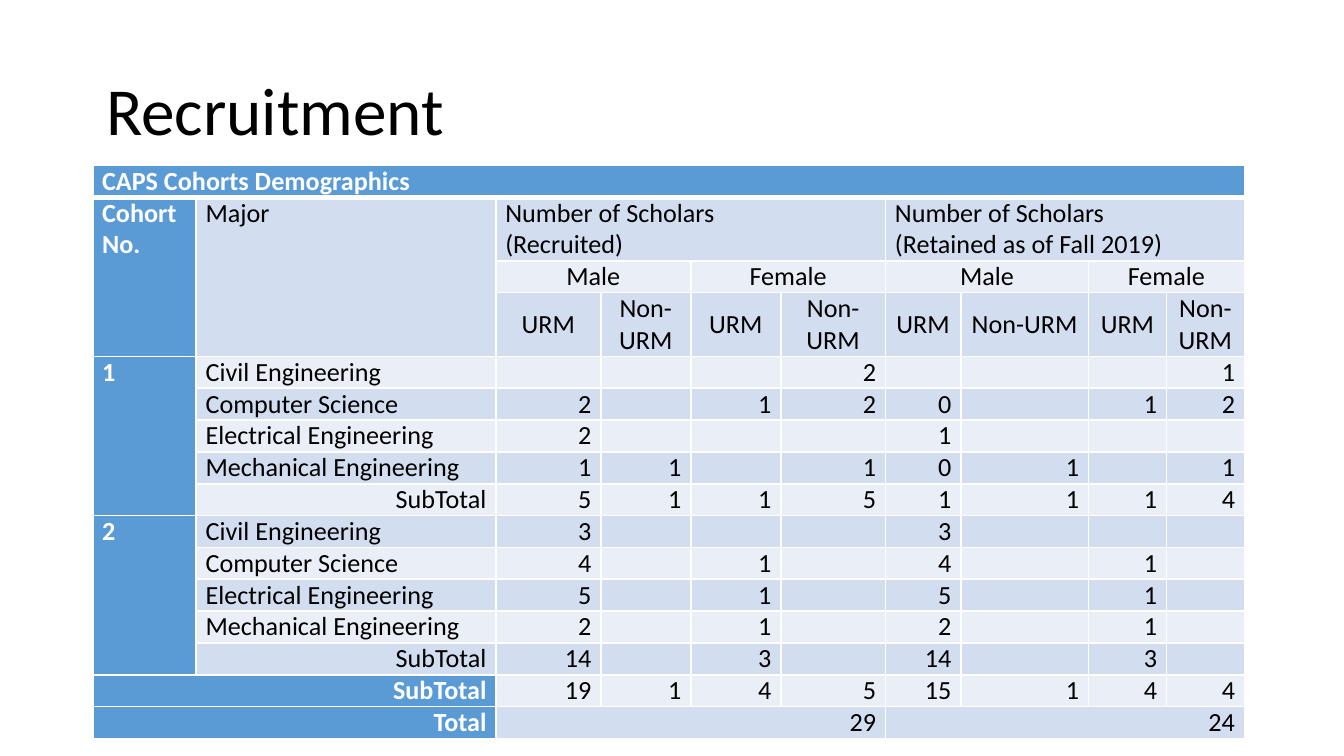
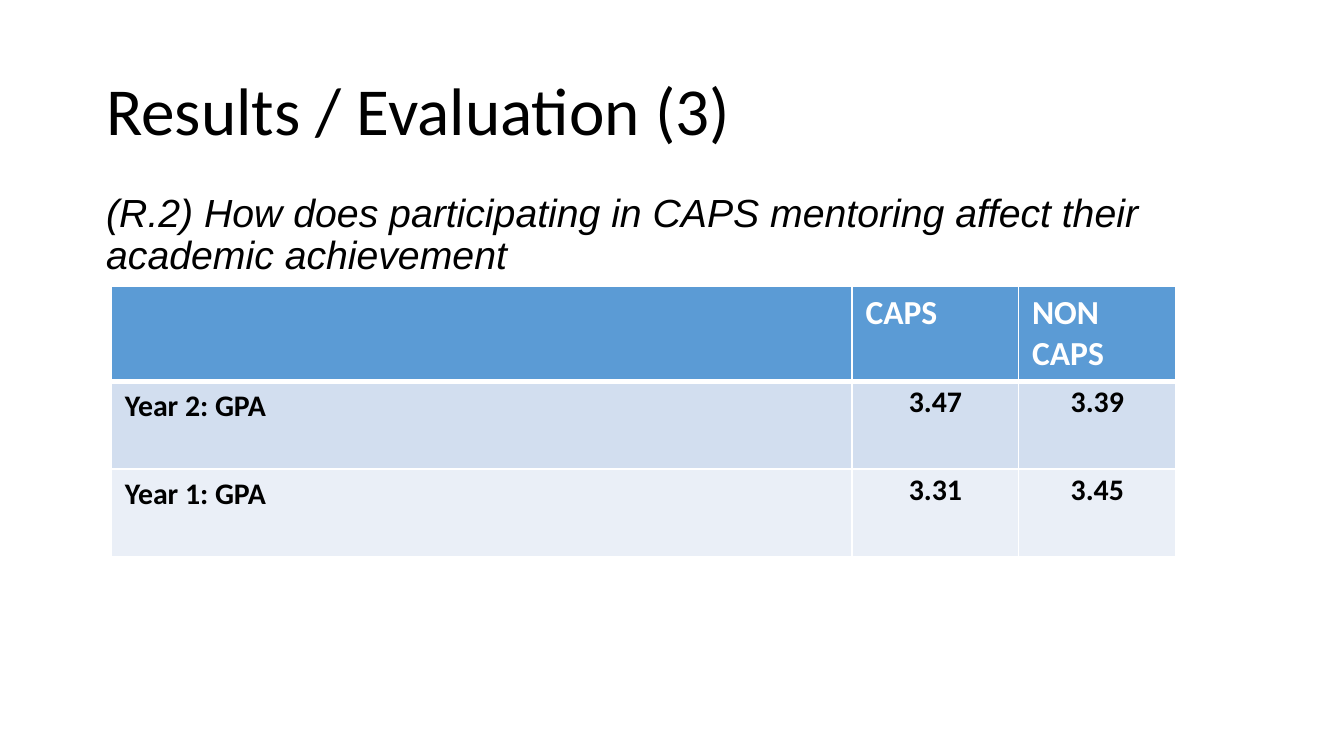
"""Build two slides on scholar recruitment and results."""
from lxml import etree
from pptx import Presentation
from pptx.dml.color import RGBColor
from pptx.enum.text import MSO_ANCHOR, MSO_AUTO_SIZE, PP_ALIGN
from pptx.oxml.ns import qn
from pptx.util import Inches, Pt

LEFT, RIGHT, CENTER, JUSTIFY = PP_ALIGN.LEFT, PP_ALIGN.RIGHT, PP_ALIGN.CENTER, PP_ALIGN.JUSTIFY
TOP, MIDDLE = MSO_ANCHOR.TOP, MSO_ANCHOR.MIDDLE
NO_AUTOFIT = MSO_AUTO_SIZE.NONE

BLACK = RGBColor(0x00, 0x00, 0x00)
WHITE = RGBColor(0xFF, 0xFF, 0xFF)
HEADER_BLUE = RGBColor(0x5B, 0x9B, 0xD5)
BANDS = (RGBColor(0xEA, 0xEF, 0xF7), RGBColor(0xD2, 0xDE, 0xEF))

SLIDE_WIDTH = Inches(10)
SLIDE_HEIGHT = SLIDE_WIDTH * 9 // 16
TITLE_BOX = (0.69, 0.3, 8.62, 1.09)
BODY_BOX = (0.69, 1.39, 8.62, 3.68)
TITLE_ONLY, TITLE_AND_CONTENT = 5, 1
TIGHT = (0.07, 0)
ROOMY = (0.1, 0.05)

LINE_HEIGHT = 0.23
COHORT_COLUMNS = (0.77, 2.23, 0.78, 0.67, 0.67, 0.78, 0.56, 0.95, 0.58, 0.58)
COHORT_LINES = (1, 2, 1, 2) + (1,) * 12
MAJORS = ("Civil Engineering", "Computer Science", "Electrical Engineering",
          "Mechanical Engineering", "SubTotal")
COHORT_COUNTS = {
    "1": (("", "", "", "2", "", "", "", "1"),
          ("2", "", "1", "2", "0", "", "1", "2"),
          ("2", "", "", "", "1", "", "", ""),
          ("1", "1", "", "1", "0", "1", "", "1"),
          ("5", "1", "1", "5", "1", "1", "1", "4")),
    "2": (("3", "", "", "", "3", "", "", ""),
          ("4", "", "1", "", "4", "", "1", ""),
          ("5", "", "1", "", "5", "", "1", ""),
          ("2", "", "1", "", "2", "", "1", ""),
          ("14", "", "3", "", "14", "", "3", "")),
}
ALL_COHORTS = ("19", "1", "4", "5", "15", "1", "4", "4")
GPA_ROWS = (("", "CAPS", "NON CAPS"),
            ("Year 2: GPA", "3.47", "3.39"),
            ("Year 1: GPA", "3.31", "3.45"))


def format_paragraph(paragraph, size, color, align, font="Calibri", spacing=None):
    """Set the look of one paragraph."""
    paragraph.alignment = align
    paragraph.line_spacing = spacing
    paragraph.font.name = font
    paragraph.font.size = Pt(size)
    paragraph.font.color.rgb = color


def place(holder, box):
    """Move a placeholder to a box given in inches."""
    holder.left, holder.top, holder.width, holder.height = map(Inches, box)
    holder.text_frame.auto_size = NO_AUTOFIT


def add_titled_slide(deck, layout, heading):
    """Add a slide with the shared title style."""
    slide = deck.slides.add_slide(deck.slide_layouts[layout])
    title = slide.shapes.title
    place(title, TITLE_BOX)
    title.text_frame.text = heading
    title.text_frame.vertical_anchor = MIDDLE
    format_paragraph(title.text_frame.paragraphs[0], 36, BLACK, LEFT, spacing=0.9)
    return slide


def add_question(slide, wording):
    """Write the research question in the body placeholder."""
    body = slide.placeholders[1]
    place(body, BODY_BOX)
    body.text_frame.text = wording
    question = body.text_frame.paragraphs[0]
    format_paragraph(question, 21, BLACK, LEFT, "Arial", 0.9)
    question.space_before = Pt(7.5)
    question.font.italic = True
    properties = question._p.get_or_add_pPr()
    properties.set("marL", "0")
    properties.set("indent", "0")
    bullet = etree.Element(qn("a:buNone"))
    properties.find(qn("a:defRPr")).addprevious(bullet)


def add_borders(cell, row):
    """Draw white cell borders, thicker under the header row."""
    properties = cell._tc.get_or_add_tcPr()
    widths = {"lnL": 1, "lnR": 1, "lnT": 3 if row == 1 else 1, "lnB": 3 if row == 0 else 1}
    for side, width in widths.items():
        line = etree.SubElement(properties, qn(f"a:{side}"), w=str(Pt(width)))
        fill = etree.SubElement(line, qn("a:solidFill"))
        etree.SubElement(fill, qn("a:srgbClr"), val=str(WHITE))


def fill_cell(cell, text, fill, size, color, bold, align, margins, anchor=TOP, spacing=None):
    """Fill a cell with colour and formatted text."""
    cell.fill.solid()
    cell.fill.fore_color.rgb = fill
    cell.margin_left = cell.margin_right = Inches(margins[0])
    cell.margin_top = cell.margin_bottom = Inches(margins[1])
    cell.vertical_anchor = anchor
    cell.text_frame.text = text
    for paragraph in cell.text_frame.paragraphs:
        format_paragraph(paragraph, size, color, align, spacing=spacing)
        paragraph.font.bold = bold
        if not text:
            paragraph._p.get_or_add_endParaRPr().set("sz", str(size * 100))


def add_grid(slide, left, top, columns, heights):
    """Add a bordered table with the given column widths and row heights."""
    frame = slide.shapes.add_table(len(heights), len(columns), Inches(left), Inches(top),
                                   Inches(sum(columns)), Inches(sum(heights)))
    grid = frame.table
    grid.first_row = grid.horz_banding = False
    for column, width in zip(grid.columns, columns):
        column.width = Inches(width)
    for index, (row, height) in enumerate(zip(grid.rows, heights)):
        row.height = Inches(height)
        for cell in row.cells:
            add_borders(cell, index)
    return grid


def cohort_texts():
    """Return the texts of the demographics table by row and column."""
    texts = {(0, 0): "CAPS Cohorts Demographics", (1, 0): "Cohort\nNo.", (1, 1): "Major",
             (1, 2): "Number of Scholars\n(Recruited)",
             (1, 6): "Number of Scholars\n(Retained as of Fall 2019)",
             (14, 0): "SubTotal", (15, 0): "Total", (15, 2): "29", (15, 6): "24"}
    for column in range(2, 10):
        texts[3, column] = ("URM", "Non-URM")[column % 2]
        texts[14, column] = ALL_COHORTS[column - 2]
        if column % 2 == 0:
            texts[2, column] = "Female" if column % 4 == 0 else "Male"
    for block, (cohort, counts) in enumerate(COHORT_COUNTS.items()):
        first = 4 + block * len(MAJORS)
        texts[first, 0] = cohort
        for row, (major, numbers) in enumerate(zip(MAJORS, counts), first):
            for column, value in enumerate((major,) + numbers, 1):
                texts[row, column] = value
    return texts


def merge_cohort_cells(grid):
    """Merge header, cohort and total cells."""
    spans = [(0, 0, 1, 10), (1, 0, 3, 1), (1, 1, 3, 1), (4, 0, 5, 1), (9, 0, 5, 1),
             (14, 0, 1, 2), (15, 0, 1, 2)]
    spans += [(row, column, 1, 4) for row in (1, 15) for column in (2, 6)]
    spans += [(2, column, 1, 2) for column in (2, 4, 6, 8)]
    for row, column, down, across in spans:
        grid.cell(row, column).merge(grid.cell(row + down - 1, column + across - 1))


def add_cohort_table(slide):
    """Add the demographics of both cohorts."""
    grid = add_grid(slide, 0.69, 1.23, COHORT_COLUMNS,
                    [lines * LINE_HEIGHT for lines in COHORT_LINES])
    merge_cohort_cells(grid)
    texts = cohort_texts()
    for row in range(len(COHORT_LINES)):
        for column in range(len(COHORT_COLUMNS)):
            text = texts.get((row, column), "")
            heading = row == 0 or column == 0
            if row in (2, 3):
                align = CENTER
            elif "Total" in text or (column > 1 and row > 3):
                align = RIGHT
            else:
                align = JUSTIFY
            fill_cell(grid.cell(row, column), text, HEADER_BLUE if heading else BANDS[row % 2],
                      14, WHITE if heading else BLACK, heading, align, TIGHT,
                      MIDDLE if row == 3 and column > 1 else TOP)


def add_gpa_table(slide):
    """Add the GPA comparison."""
    grid = add_grid(slide, 0.83, 2.13, (5.51, 1.24, 1.17), (0.7, 0.65, 0.65))
    for row, texts in enumerate(GPA_ROWS):
        for column, text in enumerate(texts):
            cell = grid.cell(row, column)
            if row == 0:
                fill_cell(cell, text, HEADER_BLUE, 18, WHITE, True, LEFT, ROOMY)
            elif column == 0:
                fill_cell(cell, text, BANDS[row % 2], 16, BLACK, True, LEFT, ROOMY)
            else:
                fill_cell(cell, text, BANDS[row % 2], 16, BLACK, True, CENTER, TIGHT,
                          spacing=1.07)


def main():
    """Build and save the deck."""
    deck = Presentation()
    deck.slide_width, deck.slide_height = SLIDE_WIDTH, SLIDE_HEIGHT
    add_cohort_table(add_titled_slide(deck, TITLE_ONLY, "Recruitment"))
    results = add_titled_slide(deck, TITLE_AND_CONTENT, "Results / Evaluation (3)")
    add_question(results, "(R.2) How does participating in CAPS mentoring affect their "
                          "academic achievement")
    add_gpa_table(results)
    deck.save("out.pptx")


if __name__ == "__main__":
    main()
